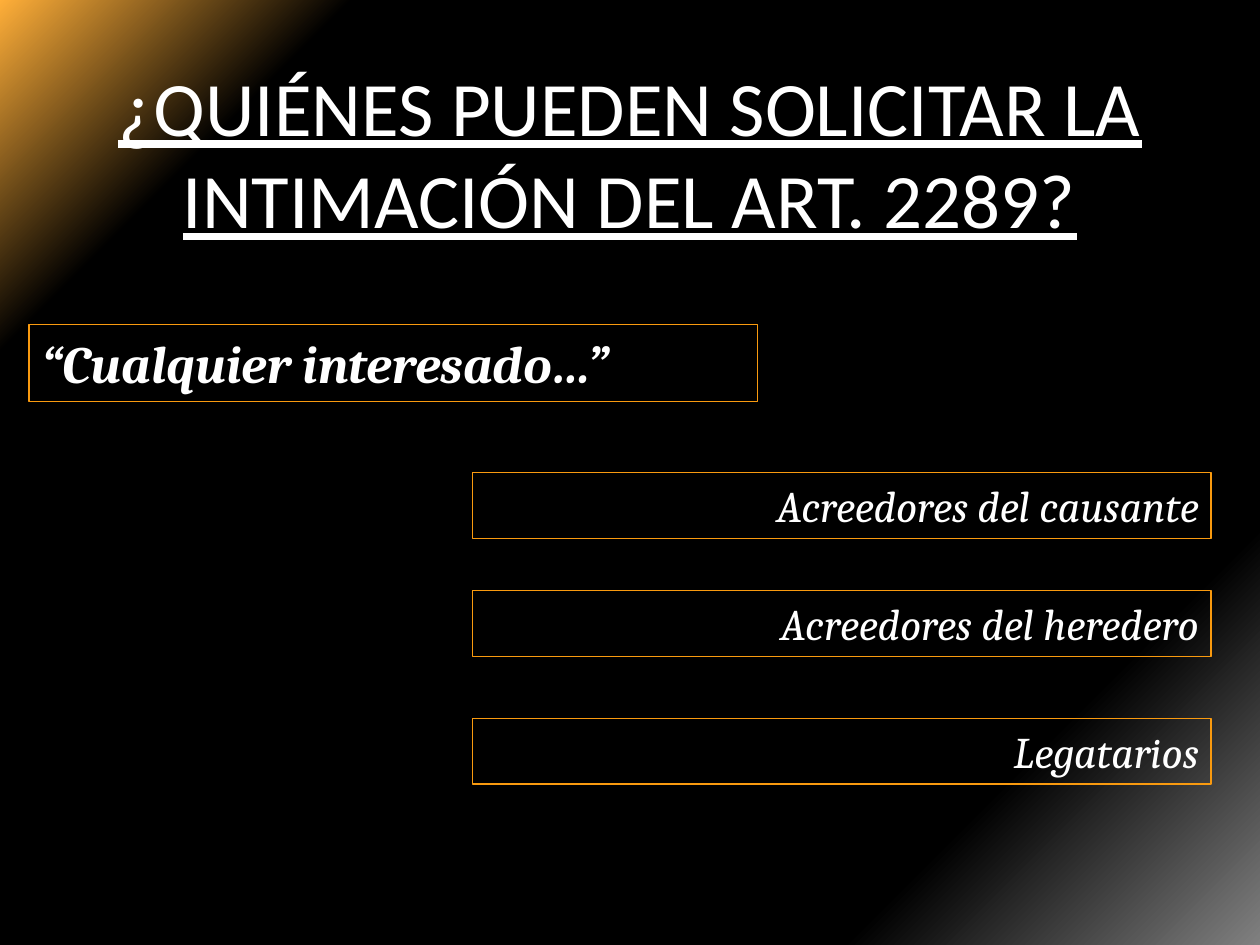
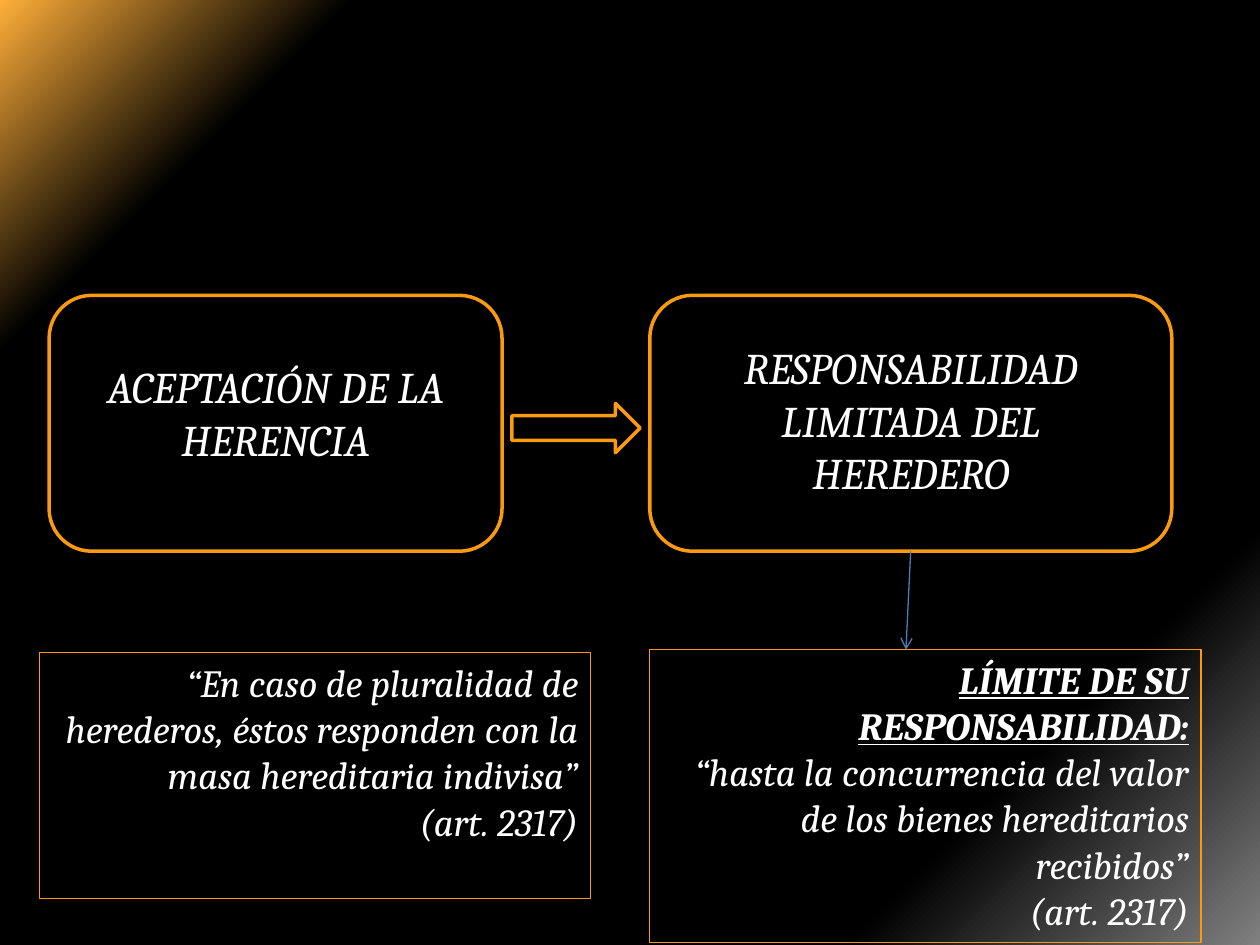
from dataclasses import dataclass
from typing import Optional

from lxml.etree import SubElement
from pptx import Presentation
from pptx.dml.color import RGBColor
from pptx.enum.shapes import MSO_CONNECTOR, MSO_SHAPE
from pptx.enum.text import MSO_ANCHOR, PP_ALIGN
from pptx.oxml.ns import qn
from pptx.presentation import Presentation as Deck
from pptx.slide import Slide
from pptx.util import Pt

WHITE = RGBColor(0xFF, 0xFF, 0xFF)
BLACK = RGBColor(0x00, 0x00, 0x00)
AMBER = RGBColor(0xF9, 0x9A, 0x0F)
GOLD = RGBColor(0xFF, 0xAF, 0x39)
GRAY = RGBColor(0x80, 0x80, 0x80)
BLUE = RGBColor(0x4B, 0x7E, 0xBC)

STOPS = [(0, GOLD, 100), (16, BLACK, 75), (47, BLACK, 100), (60, BLACK, 100),
         (71, BLACK, 100), (81, BLACK, 100), (100, GRAY, 100)]
LEFT, MID, RIGHT = PP_ALIGN.LEFT, PP_ALIGN.CENTER, PP_ALIGN.RIGHT


@dataclass(frozen=True)
class Area:
    """A rectangle in points."""
    left: float
    top: float
    width: float
    height: float

    def spot(self) -> tuple[Pt, Pt, Pt, Pt]:
        """Return the four lengths for a new shape."""
        return Pt(self.left), Pt(self.top), Pt(self.width), Pt(self.height)


@dataclass(frozen=True)
class Style:
    """The look of a run."""
    size: float
    font: str = "Cambria"
    bold: bool = False
    slant: bool = True
    under: bool = False


@dataclass(frozen=True)
class Line:
    """A paragraph of one run."""
    text: str
    style: Style


@dataclass(frozen=True)
class Panel:
    """A text area, framed when an edge colour is given."""
    area: Area
    lines: tuple[Line, ...]
    align: PP_ALIGN = RIGHT
    edge: Optional[RGBColor] = AMBER
    anchor: MSO_ANCHOR = MSO_ANCHOR.TOP


@dataclass(frozen=True)
class Solid:
    """A black preset shape with a thick amber outline."""
    kind: MSO_SHAPE
    area: Area


TITLE = Style(44, "Calibri", slant=False, under=True)
QUOTE = Style(30, bold=True)
LABEL = Style(25)
NOTE = Style(22)
HEAD = Style(22, bold=True, under=True)


def add_page(deck: Deck) -> Slide:
    """Add a blank slide with the shared gradient."""
    page = deck.slides.add_slide(deck.slide_layouts[6])
    fill = page.background.fill
    fill.gradient()
    fill.gradient_angle = 315
    stops = next(page.element.iter(qn("a:gsLst")))
    for old in list(stops):
        stops.remove(old)
    for place, tint, alpha in STOPS:
        stop = SubElement(stops, qn("a:gs"), pos=str(place * 1000))
        color = SubElement(stop, qn("a:srgbClr"), val=str(tint))
        if alpha < 100:
            SubElement(color, qn("a:alpha"), val=str(alpha * 1000))
    return page


def add_panel(page: Slide, panel: Panel) -> None:
    """Draw a text area run by run."""
    box = page.shapes.add_textbox(*panel.area.spot())
    if panel.edge is not None:
        box.line.color.rgb = panel.edge
        box.line.width = Pt(0.75)
    frame = box.text_frame
    frame.word_wrap = True
    frame.vertical_anchor = panel.anchor
    for spot, line in enumerate(panel.lines):
        para = frame.add_paragraph() if spot else frame.paragraphs[0]
        para.alignment = panel.align
        run = para.add_run()
        run.text = line.text
        font, style = run.font, line.style
        font.name, font.size = style.font, Pt(style.size)
        font.bold, font.italic, font.underline = style.bold, style.slant, style.under
        font.color.rgb = WHITE


def add_solid(page: Slide, solid: Solid) -> None:
    """Draw a black shape with an amber outline."""
    shape = page.shapes.add_shape(solid.kind, *solid.area.spot())
    shape.shadow.inherit = False
    shape.fill.solid()
    shape.fill.fore_color.rgb = BLACK
    shape.line.color.rgb = AMBER
    shape.line.width = Pt(2)


def add_arrow(page: Slide, start: tuple[float, float], end: tuple[float, float]) -> None:
    """Draw a thin blue line with an open arrowhead."""
    ends = [Pt(value) for value in (*start, *end)]
    link = page.shapes.add_connector(MSO_CONNECTOR.STRAIGHT, *ends)
    link.line.color.rgb = BLUE
    link.line.width = Pt(0.75)
    SubElement(link.line._get_or_add_ln(), qn("a:tailEnd"), type="arrow")
    SubElement(link.element.spPr, qn("a:effectLst"))


def draw_claims(deck: Deck) -> None:
    """Build the slide on who may ask for the order."""
    page = add_page(deck)
    title = Line("¿QUIÉNES PUEDEN SOLICITAR LA INTIMACIÓN DEL ART. 2289?", TITLE)
    add_panel(page, Panel(Area(36, 21.6, 648, 130.3), (title,), MID, None, MSO_ANCHOR.MIDDLE))
    quote = Line("“Cualquier interesado…”", QUOTE)
    add_panel(page, Panel(Area(16.6, 185.4, 416.2, 44), (quote,), LEFT))
    parties = [(270, "Acreedores del causante"), (337.5, "Acreedores del heredero"),
               (410.4, "Legatarios")]
    for top, name in parties:
        add_panel(page, Panel(Area(270, top, 422, 37.6), (Line(name, LABEL),)))


def draw_duty(deck: Deck) -> None:
    """Build the slide on the heir's limited liability."""
    page = add_page(deck)
    blocks = [
        (28.1, 258.8, 202.3, 67.7, "ACEPTACIÓN DE LA HERENCIA"),
        (371.3, 298.3, 191.3, 98, "RESPONSABILIDAD LIMITADA DEL HEREDERO"),
    ]
    inset = 16.7
    for left, width, top, height, text in blocks:
        add_solid(page, Solid(MSO_SHAPE.ROUNDED_RECTANGLE, Area(left, 168.8, width, 146.2)))
        area = Area(left + inset, top, width - 2 * inset, height)
        add_panel(page, Panel(area, (Line(text, LABEL),), MID, None))
    add_solid(page, Solid(MSO_SHAPE.RIGHT_ARROW, Area(292.5, 230.5, 73.3, 28.2)))
    source = Line("(art. 2317)", NOTE)
    limit = (Line("LÍMITE DE SU RESPONSABILIDAD:", HEAD),
             Line("“hasta la concurrencia del valor de los bienes hereditarios recibidos”", NOTE),
             source)
    add_panel(page, Panel(Area(371.3, 371.3, 315, 167.2), limit))
    add_arrow(page, (520.4, 315), (517.7, 371.3))
    plural = (Line("“En caso de pluralidad de herederos, éstos responden con la "
                   "masa hereditaria indivisa”", NOTE), source)
    add_panel(page, Panel(Area(22.5, 373, 315, 140.4), plural))


def main() -> None:
    """Build and save the deck."""
    deck = Presentation()
    deck.slide_width, deck.slide_height = Pt(720), Pt(540)
    draw_claims(deck)
    draw_duty(deck)
    deck.save("out.pptx")


if __name__ == "__main__":
    main()
